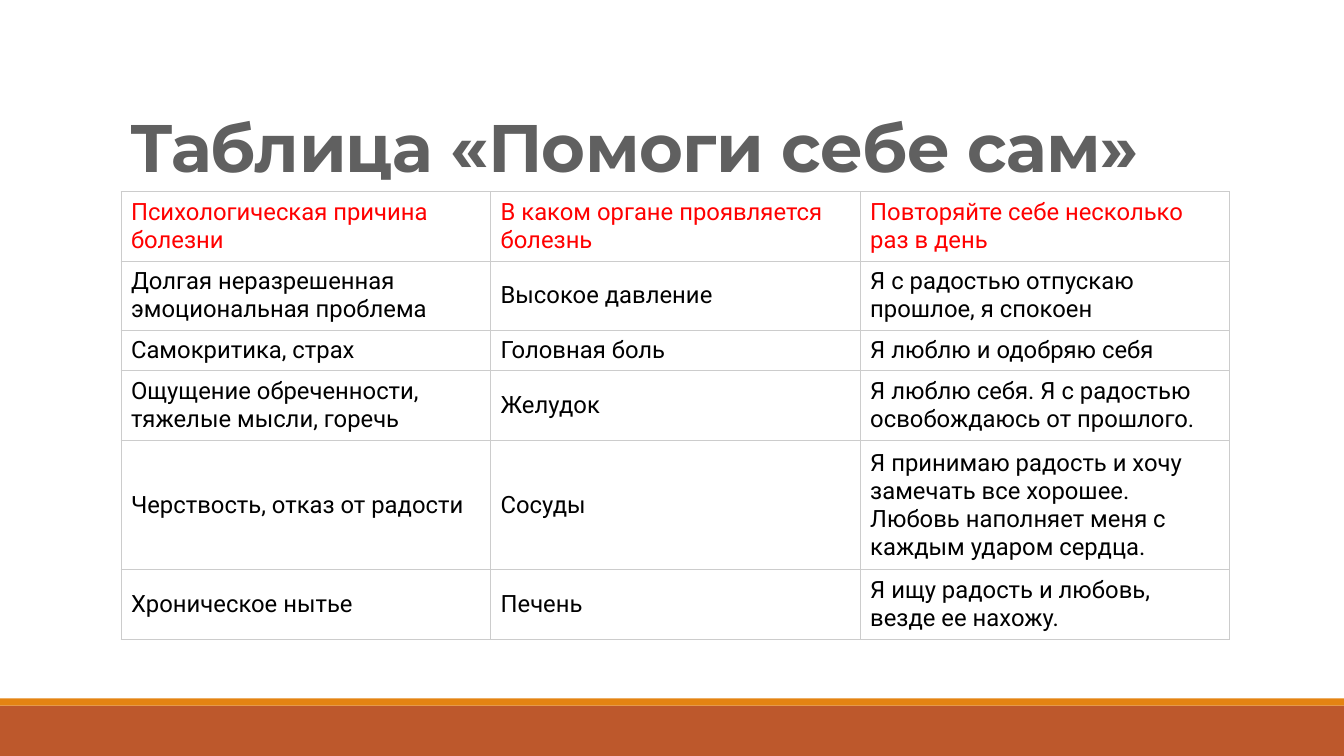
import dataclasses
import pptx
import pptx.dml.color
import pptx.enum.shapes
import pptx.enum.text
import pptx.oxml
import pptx.oxml.ns
import pptx.util


@dataclasses.dataclass(frozen=True)
class Theme:
    head: str = "Montserrat"
    body: str = "Roboto"
    big: float = 48
    small: float = 17
    title: str = "606060"
    label: str = "FF0000"
    text: str = "000000"
    paper: str = "FFFFFF"
    edge: str = "CCCCCC"
    rule: str = "808080"
    rust: str = "BD582C"
    amber: str = "E48312"


THEME = Theme()
COLS, ROWS = 133.33, 75  # the slide's grid, ten units to the inch

TITLE = "Таблица «Помоги себе сам»"
HEIGHTS = (6.9, 6.9, 4, 6.9, 12.8, 6.9)
DATA = (
    ("Психологическая причина болезни",
     "В каком органе проявляется болезнь",
     "Повторяйте себе несколько раз в день"),
    ("Долгая неразрешенная эмоциональная проблема",
     "Высокое давление",
     "Я с радостью отпускаю прошлое, я спокоен"),
    ("Самокритика, страх", "Головная боль", "Я люблю и одобряю себя"),
    ("Ощущение обреченности, тяжелые мысли, горечь",
     "Желудок",
     "Я люблю себя. Я с радостью освобождаюсь от прошлого."),
    ("Черствость, отказ от радости",
     "Сосуды",
     "Я принимаю радость и хочу замечать все хорошее. "
     "Любовь наполняет меня с каждым ударом сердца."),
    ("Хроническое нытье", "Печень", "Я ищу радость и любовь, везде ее нахожу."),
)


def unit(count):
    return pptx.util.Inches(count / 10)


def color(code):
    return pptx.dml.color.RGBColor.from_string(code)


def paint(part, code):
    part.fill.solid()
    part.fill.fore_color.rgb = color(code)


def write(frame, text, face, size, code, bold=False):
    run = frame.paragraphs[0].add_run()
    run.text = text
    font = run.font
    font.name, font.size, font.bold = face, pptx.util.Pt(size), bold
    font.color.rgb = color(code)
    return run


def border(cell):
    props = cell._tc.get_or_add_tcPr()
    for spot, side in enumerate("LRTB"):
        line = pptx.oxml.parse_xml(
            f'<a:ln{side} {pptx.oxml.ns.nsdecls("a")} w="{pptx.util.Pt(0.75)}">'
            f'<a:solidFill><a:srgbClr val="{THEME.edge}"/></a:solidFill>'
            f'</a:ln{side}>')
        props.insert(spot, line)


# Two coloured bands along the foot
def add_foot(slide, left, top, width, height):
    thin = 0.7
    bands = ((top + thin, height - thin, THEME.rust), (top, thin, THEME.amber))
    for start, depth, code in bands:
        band = slide.shapes.add_shape(
            pptx.enum.shapes.MSO_SHAPE.RECTANGLE,
            unit(left), unit(start), unit(width), unit(depth))
        band.shadow.inherit = False
        paint(band, code)
        band.line.fill.background()


# Heading with the thin rule under it
def add_title(slide, left, top, width, height):
    base, inset = top + height, 1.1
    rule = slide.shapes.add_connector(
        pptx.enum.shapes.MSO_CONNECTOR.STRAIGHT,
        unit(left + inset), unit(base), unit(left + width - inset + 0.2), unit(base))
    rule.line.color.rgb = color(THEME.rule)
    rule.line.width = pptx.util.Pt(0.5)
    rule._element.spPr.append(
        pptx.oxml.parse_xml(f'<a:effectLst {pptx.oxml.ns.nsdecls("a")}/>'))

    box = slide.shapes.add_textbox(unit(left), unit(top), unit(width), unit(height))
    frame = box.text_frame
    frame.word_wrap = True
    frame.vertical_anchor = pptx.enum.text.MSO_ANCHOR.BOTTOM
    frame.paragraphs[0].line_spacing = 0.85
    run = write(frame, TITLE, THEME.head, THEME.big, THEME.title, True)
    run._r.get_or_add_rPr().set("spc", "-50")


# Table of causes, organs and phrases
def add_grid(slide, left, top, width, height):
    table = slide.shapes.add_table(
        len(DATA), len(DATA[0]),
        unit(left), unit(top), unit(width), unit(height)).table
    table.first_row = table.horz_banding = False
    for col in table.columns:
        col.width = unit(width / len(DATA[0]))
    for r, (texts, tall) in enumerate(zip(DATA, HEIGHTS)):
        table.rows[r].height = unit(tall)
        code = THEME.text if r else THEME.label
        for c, text in enumerate(texts):
            cell = table.cell(r, c)
            paint(cell, THEME.paper)
            border(cell)
            cell.vertical_anchor = pptx.enum.text.MSO_ANCHOR.MIDDLE
            write(cell.text_frame, text, THEME.body, THEME.small, code)


def main():
    deck = pptx.Presentation()
    deck.slide_width, deck.slide_height = unit(COLS), unit(ROWS)
    slide = deck.slides.add_slide(deck.slide_layouts[6])
    paint(slide.background, THEME.paper)
    add_foot(slide, 0, 69.3, COLS, ROWS - 69.3)
    add_title(slide, 12, 3.1, 110, 15.9)
    add_grid(slide, 12, 19, 110, sum(HEIGHTS))
    deck.save("out.pptx")


if __name__ == "__main__":
    main()
